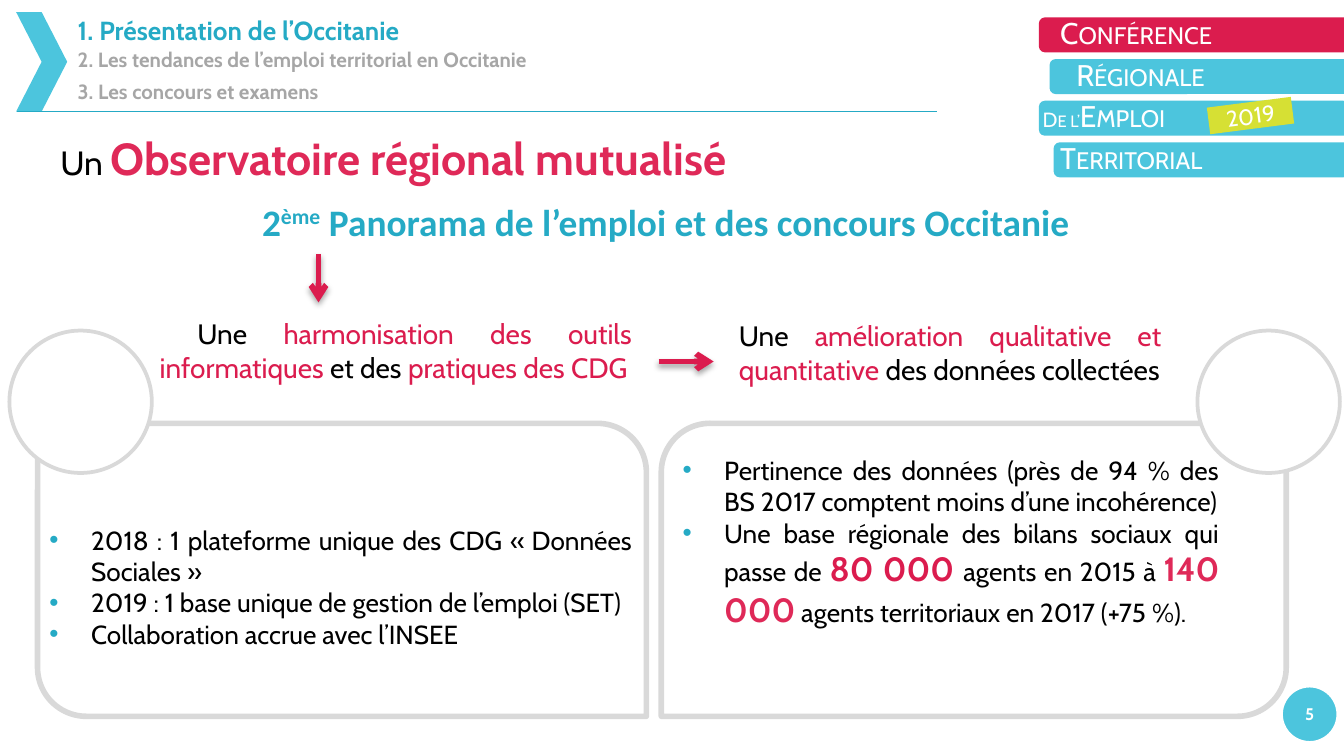
import lxml.etree
import pptx
import pptx.dml.color
import pptx.enum.shapes
import pptx.enum.text
import pptx.oxml
import pptx.oxml.ns
import pptx.util

Inches = pptx.util.Inches
Pt = pptx.util.Pt
SHAPE = pptx.enum.shapes.MSO_SHAPE
ALIGN = pptx.enum.text.PP_ALIGN
ANCHOR = pptx.enum.text.MSO_ANCHOR

THEME = {
    "font": "Cabin", "heading_font": "Calibri",
    "black": "000000", "white": "FFFFFF", "grey": "A6A6A6", "border": "D9D9D9",
    "cyan": "4CC5DD", "blue": "25AAC5", "red": "DB1C4E", "pink": "DF2958", "lime": "D6E034",
    "title": 24, "heading": 20, "lead": 18, "badge": 16, "claim": 15,
    "body": 14, "year": 12, "small": 11, "number": 9,
}


def run(text, size="body", color="black", **options):
    """Describe one run; options are bold, font, small_caps and baseline."""
    return {"text": text, "size": size, "color": color, **options}


TITLE = [run("Un ", "lead"), run("Observatoire régional mutualisé", "title", "pink", bold=True)]
HEADING_STYLE = {"size": "heading", "color": "blue", "bold": True, "font": "heading_font"}
HEADING = [
    run("2", **HEADING_STYLE),
    run("ème", baseline=30000, **HEADING_STYLE),
    run(" Panorama de l’emploi et des concours Occitanie", **HEADING_STYLE),
]
AGENDA = [  # text, size, colour, top, height
    ("1. Présentation de l’Occitanie", "body", "blue", 0.06, 0.34),
    ("2. Les tendances de l’emploi territorial en Occitanie", "small", "grey", 0.30, 0.29),
    ("3. Les concours et examens", "small", "grey", 0.54, 0.29),
]
BADGES = [  # bar left, colour, label left, label width, runs as (text, size)
    (7.73, "red", 7.79, 1.38, [("Conférence", "badge")]),
    (7.81, "cyan", 7.91, 1.26, [("Régionale", "badge")]),
    (7.73, "cyan", 7.66, 1.94, [("De l’", "small"), ("Emploi", "badge")]),
    (7.84, "cyan", 7.79, 1.46, [("Territorial", "badge")]),
]
CLAIMS = [  # box, first-line indent, runs
    ((1.09, 2.31, 3.71, 0.86), 0.28, [
        run("Une ", "claim"),
        run("harmonisation des outils informatiques ", "claim", "red"),
        run("et des ", "claim"),
        run("pratiques des CDG", "claim", "red"),
    ]),
    ((5.4, 2.32, 3.34, 0.61), 0, [
        run("Une ", "claim"),
        run("amélioration qualitative et quantitative ", "claim", "red"),
        run("des données collectées", "claim"),
    ]),
]
DETAILS = [  # box, bullet paragraphs
    ((0.27, 3.85, 4.53, 1.1), [
        [run("2018 : 1 plateforme unique des CDG «\u00a0Données Sociales\u00a0»")],
        [run("2019 : 1 base unique de gestion de l’emploi (SET)")],
        [run("Collaboration accrue avec l’INSEE")],
    ]),
    ((4.98, 3.33, 4.19, 1.88), [
        [run("Pertinence des données (près de 94 % des BS 2017 comptent moins d’une incohérence)")],
        [
            run("Une base régionale des bilans sociaux qui passe de "),
            run("80 000 ", "lead", "red", bold=True),
            run("agents en 2015 à "),
            run("140 000", "lead", "pink", bold=True),
            run(" agents territoriaux en 2017 (+75 %)."),
        ],
    ]),
]
PANELS = [  # left, width, rounded corner adjustments
    (4.92, 4.65, (0.16667, 0)),
    (0.28, 4.53, (0, 0.16667)),
]
CIRCLE_LEFTS = [8.91, 0.07]
ARROWS = [(2.37, 1.89, 2.37, 2.25), (4.9, 2.69, 5.31, 2.69)]


def rgb(name):
    return pptx.dml.color.RGBColor.from_string(THEME[name])


def add_runs(paragraph, runs, align=ALIGN.LEFT):
    paragraph.alignment = align
    for item in runs:
        text_run = paragraph.add_run()
        text_run.text = item["text"]
        font = text_run.font
        font.name = THEME[item.get("font", "font")]
        font.size = Pt(THEME[item["size"]])
        font.bold = item.get("bold", False)
        font.color.rgb = rgb(item["color"])
        properties = text_run._r.get_or_add_rPr()
        if item.get("small_caps"):
            properties.set("cap", "small")
        if "baseline" in item:
            properties.set("baseline", str(item["baseline"]))


def prepare_frame(shape, anchor=ANCHOR.TOP):
    frame = shape.text_frame
    frame.word_wrap = True
    frame.auto_size = pptx.enum.text.MSO_AUTO_SIZE.NONE
    frame.vertical_anchor = anchor
    return frame


def add_text(slide, box, paragraphs, align=ALIGN.LEFT):
    frame = prepare_frame(slide.shapes.add_textbox(*map(Inches, box)))
    for index, runs in enumerate(paragraphs):
        paragraph = frame.add_paragraph() if index else frame.paragraphs[0]
        add_runs(paragraph, runs, align)
    return frame


def add_bullet(paragraph):
    properties = paragraph._p.get_or_add_pPr()
    properties.set("marL", str(Inches(0.31)))
    properties.set("indent", str(-Inches(0.31)))
    color = lxml.etree.SubElement(properties, pptx.oxml.ns.qn("a:buClr"))
    lxml.etree.SubElement(color, pptx.oxml.ns.qn("a:srgbClr"), val=THEME["blue"])
    lxml.etree.SubElement(properties, pptx.oxml.ns.qn("a:buFont"), typeface="Arial")
    lxml.etree.SubElement(properties, pptx.oxml.ns.qn("a:buChar"), char="•")


def add_shape(slide, kind, box, fill=None, line=None, width=0):
    shape = slide.shapes.add_shape(kind, *map(Inches, box))
    shape.shadow.inherit = False
    if fill:
        shape.fill.solid()
        shape.fill.fore_color.rgb = rgb(fill)
    else:
        shape.fill.background()
    if line:
        shape.line.color.rgb = rgb(line)
        shape.line.width = Pt(width)
    else:
        shape.line.fill.background()
    return shape


def add_line(slide, ends, color, width, arrow=False):
    """Draw a straight line; an arrow also gets a soft shadow."""
    connector = slide.shapes.add_connector(
        pptx.enum.shapes.MSO_CONNECTOR.STRAIGHT, *map(Inches, ends))
    connector.line.color.rgb = rgb(color)
    connector.line.width = Pt(width)
    effects = lxml.etree.SubElement(connector._element.spPr, pptx.oxml.ns.qn("a:effectLst"))
    if arrow:
        lxml.etree.SubElement(
            connector.line._get_or_add_ln(), pptx.oxml.ns.qn("a:tailEnd"), type="arrow")
        effects.append(pptx.oxml.parse_xml(
            f'<a:outerShdw {pptx.oxml.ns.nsdecls("a")} blurRad="{Pt(3.1)}" dist="{Pt(1.8)}" '
            'dir="5400000" rotWithShape="0"><a:srgbClr val="000000">'
            '<a:alpha val="35000"/></a:srgbClr></a:outerShdw>'))


def add_centred_label(shape, label):
    frame = prepare_frame(shape, ANCHOR.MIDDLE)
    frame.margin_left = frame.margin_right = frame.margin_top = frame.margin_bottom = 0
    add_runs(frame.paragraphs[0], [label], ALIGN.CENTER)


def add_badges(slide):
    for index, (left, color, label_left, label_width, parts) in enumerate(BADGES):
        top = 0.13 + 0.31 * index
        add_shape(slide, SHAPE.ROUNDED_RECTANGLE, (left, top, 10.04 - left, 0.26), color)
        label = [run(text, size, "white", small_caps=True) for text, size in parts]
        add_text(slide, (label_left, top - 0.07, label_width, 0.37), [label])
    year = add_shape(slide, SHAPE.RECTANGLE, (8.99, 0.76, 0.63, 0.2), "lime")
    year.rotation = 352.7
    add_centred_label(year, run("2019", "year", "white"))


def add_agenda(slide):
    for text, size, color, top, height in AGENDA:
        add_text(slide, (0.48, top, 7.2, height), [[run(text, size, color, bold=True)]])
    add_shape(slide, SHAPE.CHEVRON, (0.12, 0.09, 0.38, 0.74), "cyan")
    add_line(slide, (0.13, 0.83, 6.97, 0.83), "blue", 0.75)


def main():
    presentation = pptx.Presentation()
    presentation.slide_width = Inches(10)
    presentation.slide_height = presentation.slide_width * 9 // 16
    slide = presentation.slides.add_slide(presentation.slide_layouts[5])

    title = slide.shapes.title
    title.left, title.top, title.width, title.height = map(Inches, (0.35, 0.92, 10, 0.5))
    add_runs(prepare_frame(title).paragraphs[0], TITLE)
    add_text(slide, (0.35, 1.43, 9.21, 0.44), [HEADING], ALIGN.CENTER)

    for left, width, corners in PANELS:
        panel = add_shape(slide, SHAPE.ROUND_2_DIAG_RECTANGLE,
                          (left, 3.15, width, 2.18), line="border", width=3)
        panel.adjustments[0], panel.adjustments[1] = corners
    for left in CIRCLE_LEFTS:
        add_shape(slide, SHAPE.OVAL, (left, 2.46, 1.06, 1.06), "white", "border", 2)
    for box, paragraphs in DETAILS:
        for paragraph in add_text(slide, box, paragraphs, ALIGN.JUSTIFY).paragraphs:
            add_bullet(paragraph)
    for box, indent, runs in CLAIMS:
        paragraph = add_text(slide, box, [runs], ALIGN.JUSTIFY).paragraphs[0]
        paragraph._p.get_or_add_pPr().set("indent", str(Inches(indent)))
    for ends in ARROWS:
        add_line(slide, ends, "red", 3, arrow=True)

    add_badges(slide)
    add_agenda(slide)
    number = add_shape(slide, SHAPE.OVAL, (9.53, 5.1, 0.43, 0.43), "cyan", "white", 2.25)
    add_centred_label(number, run("5", "number", "white", bold=True))
    presentation.save("out.pptx")


if __name__ == "__main__":
    main()
